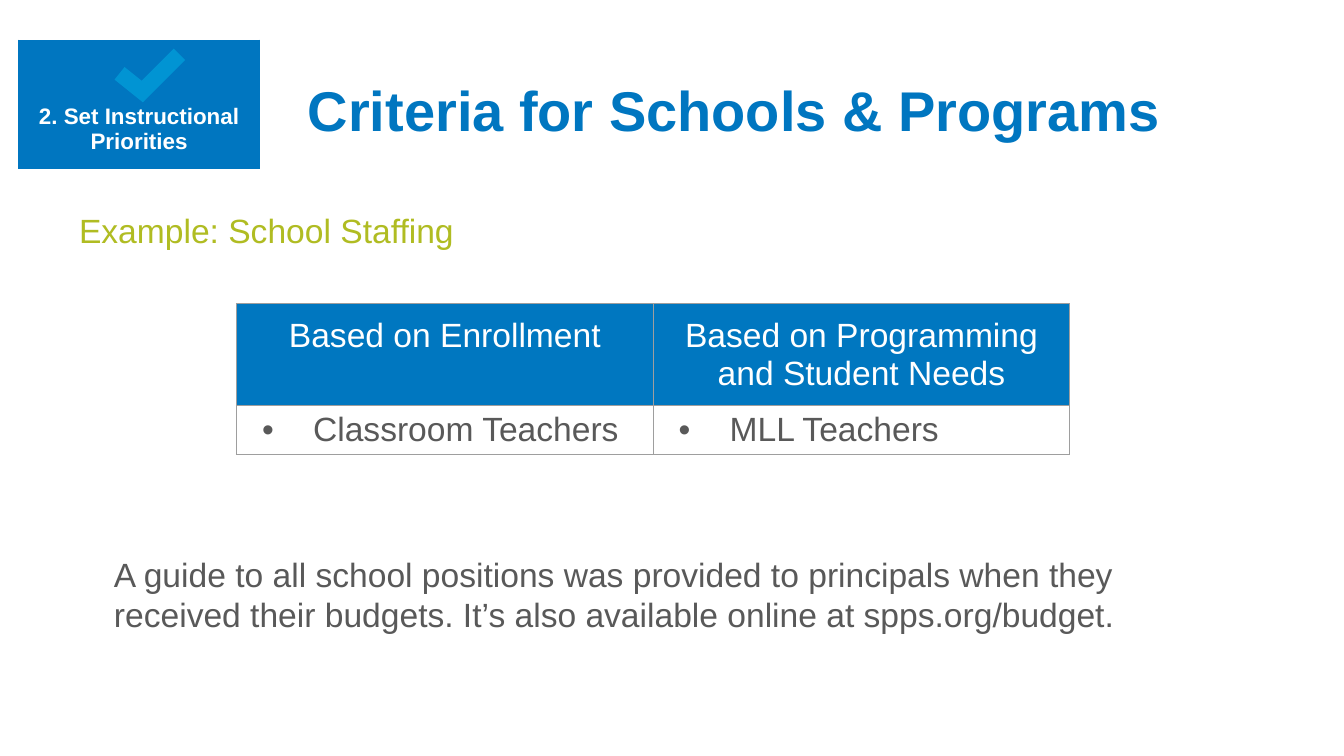
from dataclasses import dataclass

from lxml import etree
from pptx import Presentation
from pptx.dml.color import RGBColor
from pptx.enum.shapes import MSO_SHAPE
from pptx.enum.text import MSO_ANCHOR, MSO_AUTO_SIZE, PP_ALIGN
from pptx.oxml.ns import qn
from pptx.util import Inches, Pt

RECTANGLE = MSO_SHAPE.RECTANGLE
TOP, BOTTOM = MSO_ANCHOR.TOP, MSO_ANCHOR.BOTTOM
LEFT, CENTER = PP_ALIGN.LEFT, PP_ALIGN.CENTER
NO_FIT = MSO_AUTO_SIZE.NONE
TITLE_ONLY = 5


@dataclass(frozen=True)
class Theme:
    font: str = "Arial"
    blue: str = "0076C0"
    header: str = "0077C0"
    check: str = "0194D3"
    green: str = "B0BC22"
    gray: str = "595959"
    rule: str = "9E9E9E"
    white: str = "FFFFFF"
    title_size: int = 30
    body_size: int = 18
    badge_size: int = 12


THEME = Theme()


@dataclass(frozen=True)
class Area:
    left: float
    top: float
    width: float
    height: float

    def lengths(self) -> tuple:
        return tuple(Inches(n) for n in (self.left, self.top, self.width, self.height))


@dataclass(frozen=True)
class TextStyle:
    size: int
    color: str
    bold: bool = False
    align: PP_ALIGN = LEFT
    spacing: float = 1.0


@dataclass(frozen=True)
class CellStyle:
    text: TextStyle
    border: str
    fill: str
    margins: tuple = (0.1, 0.1)
    anchor: MSO_ANCHOR = TOP
    bullet: bool = False


@dataclass(frozen=True)
class Stroke:
    area: Area
    rotation: float


BADGE = CellStyle(TextStyle(THEME.badge_size, THEME.white, True, CENTER),
                  THEME.blue, THEME.blue, anchor=BOTTOM)
HEADER = CellStyle(TextStyle(THEME.body_size, THEME.white, align=CENTER),
                   THEME.rule, THEME.header)
ENTRY = CellStyle(TextStyle(THEME.body_size, THEME.gray),
                  THEME.rule, THEME.white, (0.07, 0.04), bullet=True)
CHECK_MARK = (
    Stroke(Area(0.86, 0.57, 0.27, 0.12), 38.7),
    Stroke(Area(0.96, 0.5, 0.44, 0.12), 315),
)


def write(para, text: str, style: TextStyle) -> None:
    para.alignment = style.align
    para.line_spacing = style.spacing
    para.space_before = Pt(0)
    span = para.add_run()
    span.text = text
    span.font.name = THEME.font
    span.font.size = Pt(style.size)
    span.font.bold = style.bold
    span.font.color.rgb = RGBColor.from_string(style.color)


def fill_box(box, area: Area, text: str, style: TextStyle) -> None:
    box.left, box.top, box.width, box.height = area.lengths()
    frame = box.text_frame
    frame.word_wrap = True
    frame.auto_size = NO_FIT
    frame.vertical_anchor = TOP
    frame.margin_left = frame.margin_right = Inches(0.1)
    frame.margin_top = frame.margin_bottom = Inches(0.1)
    write(frame.paragraphs[0], text, style)


def add_bullet(para, color: str) -> None:
    properties = para._p.get_or_add_pPr()
    properties.set("marL", str(Inches(0.5)))
    properties.set("indent", str(Inches(-0.38)))
    bullet_color = etree.SubElement(properties, qn("a:buClr"))
    etree.SubElement(bullet_color, qn("a:srgbClr"), val=color)
    etree.SubElement(properties, qn("a:buFont"), typeface=THEME.font)
    etree.SubElement(properties, qn("a:buChar"), char="•")


def add_borders(cell, color: str) -> None:
    properties = cell._tc.get_or_add_tcPr()
    for position, side in enumerate(("lnL", "lnR", "lnT", "lnB")):
        line = etree.Element(qn(f"a:{side}"), w=str(Pt(0.75)))
        solid = etree.SubElement(line, qn("a:solidFill"))
        etree.SubElement(solid, qn("a:srgbClr"), val=color)
        properties.insert(position, line)


def fill_cell(cell, text: str, style: CellStyle) -> None:
    side, edge = style.margins
    cell.margin_left = cell.margin_right = Inches(side)
    cell.margin_top = cell.margin_bottom = Inches(edge)
    cell.vertical_anchor = style.anchor
    cell.fill.solid()
    cell.fill.fore_color.rgb = RGBColor.from_string(style.fill)
    add_borders(cell, style.border)
    para = cell.text_frame.paragraphs[0]
    if style.bullet:
        add_bullet(para, style.text.color)
    write(para, text, style.text)


def add_grid(page, area: Area, heights: tuple, rows: tuple, styles: tuple) -> None:
    table = page.shapes.add_table(len(rows), len(rows[0]), *area.lengths()).table
    for row, height, texts, style in zip(table.rows, heights, rows, styles):
        row.height = Inches(height)
        for cell, text in zip(row.cells, texts):
            fill_cell(cell, text, style)


def add_stroke(page, stroke: Stroke) -> None:
    shape = page.shapes.add_shape(RECTANGLE, *stroke.area.lengths())
    shape.rotation = stroke.rotation
    shape.shadow.inherit = False
    shape.fill.solid()
    shape.fill.fore_color.rgb = RGBColor.from_string(THEME.check)
    shape.line.fill.background()


def add_text(page, area: Area, text: str, style: TextStyle) -> None:
    fill_box(page.shapes.add_textbox(*area.lengths()), area, text, style)


def main() -> None:
    deck = Presentation()
    deck.slide_width = Inches(10)
    deck.slide_height = deck.slide_width * 9 // 16
    page = deck.slides.add_slide(deck.slide_layouts[TITLE_ONLY])

    fill_box(page.shapes.title, Area(2.19, 0.46, 7.59, 0.66),
             "Criteria for Schools & Programs",
             TextStyle(THEME.title_size, THEME.blue, True))
    add_grid(page, Area(0.14, 0.3, 1.79, 0.95), (0.95,),
             (("2. Set Instructional Priorities",),), (BADGE,))
    for stroke in CHECK_MARK:
        add_stroke(page, stroke)

    add_text(page, Area(0.49, 1.46, 8.6, 0.58), "Example: School Staffing",
             TextStyle(THEME.body_size, THEME.green))
    add_grid(page, Area(1.76, 2.26, 6.2, 1.12), (0.76, 0.36),
             (("Based on Enrollment", "Based on Programming and Student Needs"),
              ("Classroom Teachers", "MLL Teachers")),
             (HEADER, ENTRY))
    add_text(page, Area(0.75, 4.02, 8.07, 0.99),
             "A guide to all school positions was provided to principals when they "
             "received their budgets. It’s also available online at spps.org/budget.",
             TextStyle(THEME.body_size, THEME.gray))
    deck.save("out.pptx")


if __name__ == "__main__":
    main()
